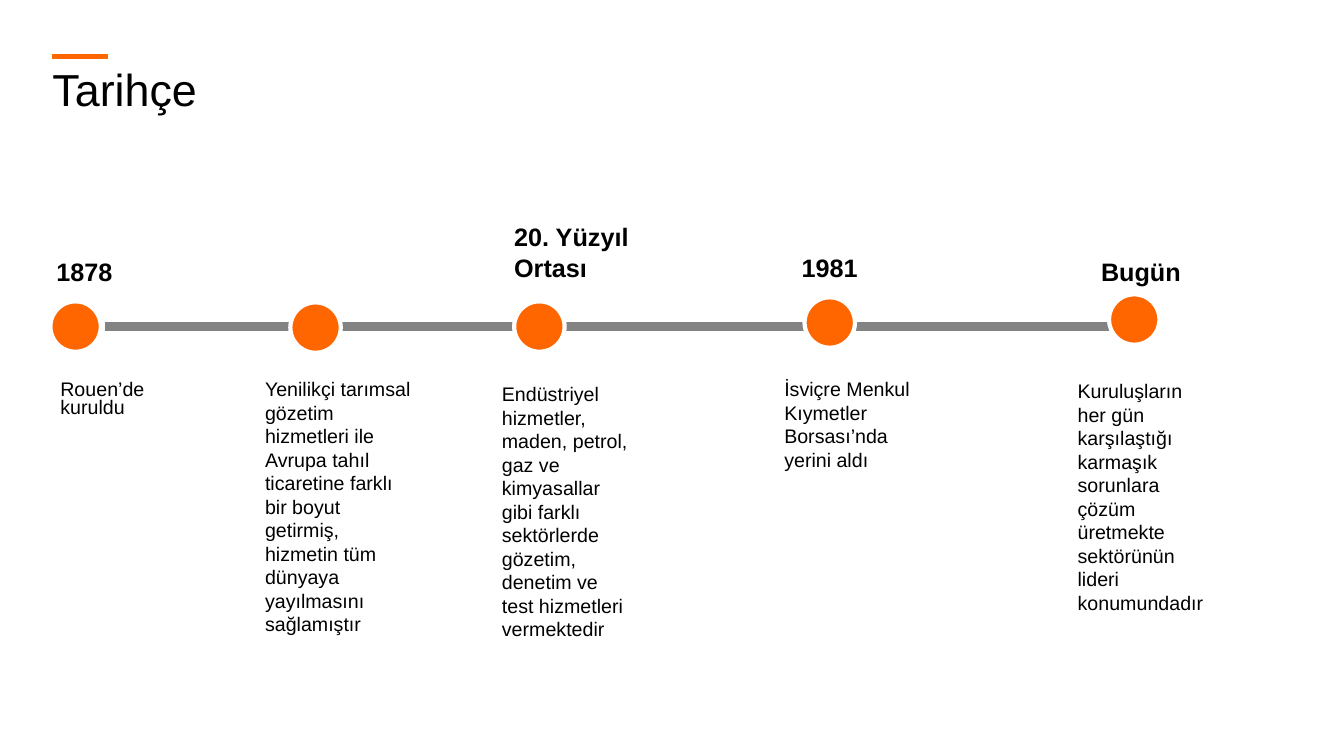
from pptx import Presentation
from pptx.dml.color import RGBColor
from pptx.enum.shapes import MSO_CONNECTOR, MSO_SHAPE
from pptx.enum.text import MSO_ANCHOR, PP_ALIGN
from pptx.oxml.ns import qn
from pptx.util import Inches, Pt
from lxml.etree import SubElement

ORANGE = RGBColor(0xFF, 0x66, 0x00)
GREY = RGBColor(0x83, 0x83, 0x83)
BLACK = RGBColor(0, 0, 0)
WHITE = RGBColor(0xFF, 0xFF, 0xFF)

TITLE = "Tarihçe"
DOT = 0.5
LINE_Y = 3.24

# dot: (left, top); date and story: (text, (left, top, width, height))
MILESTONES = [
    {"dot": (0.5, 2.99),
     "date": ("1878", (0.56, 2.54, 1.14, 0.3)),
     "story": (["Rouen’de kuruldu"], (0.5, 3.73, 1.55, 0.48)),
     "spacing": 0.8},
    {"dot": (2.88, 3.0),
     "story": (["Yenilikçi tarımsal gözetim hizmetleri ile Avrupa tahıl "
                "ticaretine farklı bir boyut getirmiş, hizmetin tüm dünyaya "
                "yayılmasını sağlamıştır"], (2.53, 3.69, 1.71, 2.69))},
    {"dot": (5.1, 2.99),
     "date": ("20. Yüzyıl Ortası", (5.1, 2.2, 1.33, 0.61)),
     "story": (["Endüstriyel hizmetler,",
                "maden, petrol, gaz ve kimyasallar gibi farklı sektörlerde",
                "gözetim, denetim ve test hizmetleri vermektedir"],
               (4.88, 3.74, 1.46, 2.69))},
    {"dot": (7.98, 2.95),
     "date": ("1981", (7.95, 2.5, 1.06, 0.3)),
     "story": (["İsviçre Menkul Kıymetler Borsası’nda yerini aldı"],
               (7.68, 3.69, 1.61, 1.04))},
    {"dot": (11.0, 2.92),
     "date": ("Bugün", (10.92, 2.54, 1.51, 0.3)),
     "story": (["Kuruluşların her gün karşılaştığı karmaşık sorunlara çözüm "
                "üretmekte sektörünün lideri konumundadır"],
               (10.59, 3.71, 1.46, 2.46))},
]


def write(sp, paragraphs, size, bold=False, spacing=1.0, margins=True):
    tf = sp.text_frame
    tf.word_wrap = True
    tf.vertical_anchor = MSO_ANCHOR.TOP
    if not margins:
        tf.margin_left = tf.margin_top = tf.margin_right = tf.margin_bottom = 0
    for i, text in enumerate(paragraphs):
        p = tf.add_paragraph() if i else tf.paragraphs[0]
        p.alignment = PP_ALIGN.LEFT
        p.line_spacing = spacing
        r = p.add_run()
        r.text = text
        r.font.name = "Arial"
        r.font.size = Pt(size)
        r.font.bold = bold
        r.font.color.rgb = BLACK


def add_text(s, paragraphs, box, **fmt):
    write(s.shapes.add_textbox(*map(Inches, box)), paragraphs, **fmt)


def add_rule(s, x1, x2, y, color, width):
    """Draw a horizontal line without a shadow."""
    line = s.shapes.add_connector(MSO_CONNECTOR.STRAIGHT, Inches(x1), Inches(y),
                                  Inches(x2), Inches(y))
    line.line.color.rgb = color
    line.line.width = Pt(width)
    SubElement(line._element.spPr, qn("a:effectLst"))


def add_dot(s, left, top):
    sp = s.shapes.add_shape(MSO_SHAPE.OVAL, Inches(left), Inches(top),
                            Inches(DOT), Inches(DOT))
    sp.shadow.inherit = False
    sp.fill.solid()
    sp.fill.fore_color.rgb = ORANGE
    sp.line.color.rgb = WHITE
    sp.line.width = Pt(3)


def main():
    prs = Presentation()
    prs.slide_width, prs.slide_height = Inches(13.33), Inches(7.5)
    s = prs.slides.add_slide(prs.slide_layouts[5])

    title = s.shapes.title
    title.left, title.top = Inches(0.52), Inches(0.67)
    title.width, title.height = Inches(12.27), Inches(0.48)
    write(title, [TITLE], size=32, spacing=0.9, margins=False)
    add_rule(s, 0.52, 1.07, 0.56, ORANGE, 3.5)

    add_rule(s, 1.04, 11.42, LINE_Y, GREY, 6)
    for m in MILESTONES:
        add_dot(s, *m["dot"])
        if "date" in m:
            date, box = m["date"]
            add_text(s, [date], box, size=18, bold=True, margins=False)
        story, box = m["story"]
        add_text(s, story, box, size=14, spacing=m.get("spacing", 1.0))

    prs.save("out.pptx")


if __name__ == "__main__":
    main()
